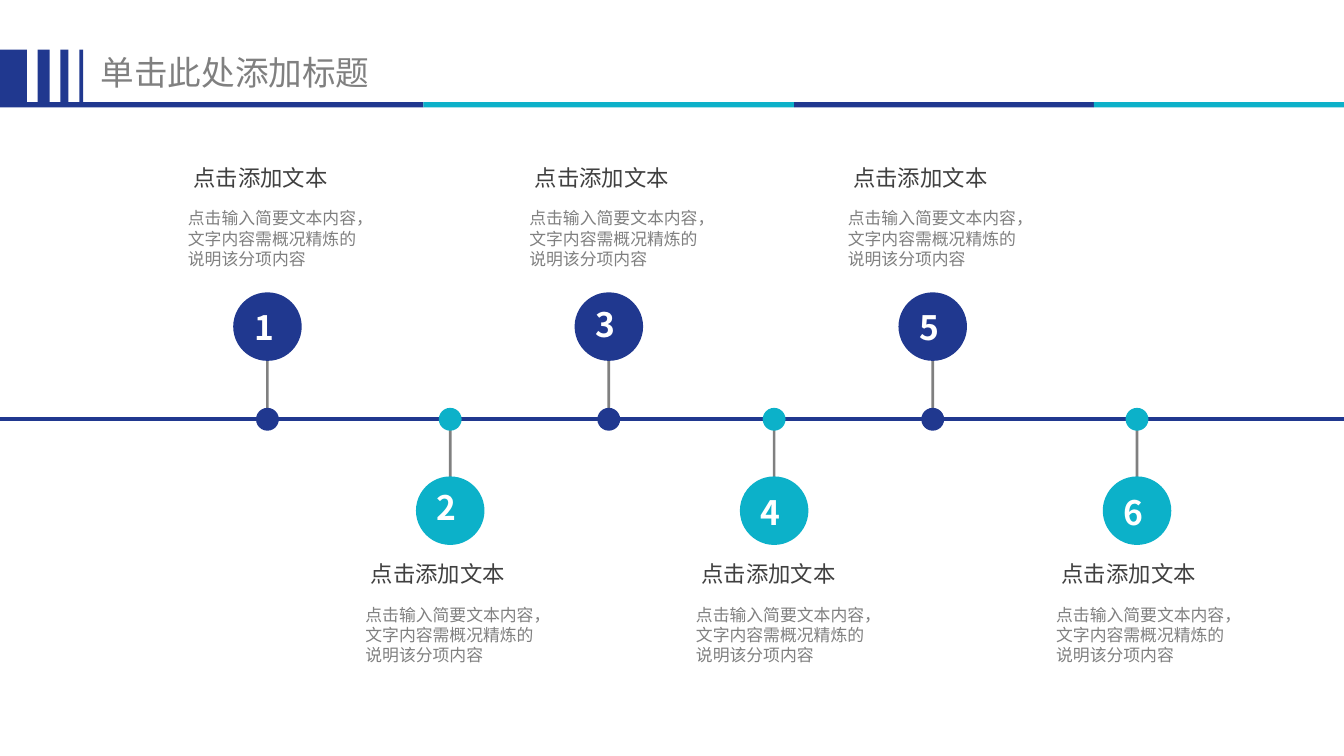
from lxml.etree import SubElement
from pptx import Presentation
from pptx.dml.color import RGBColor
from pptx.enum.shapes import MSO_SHAPE
from pptx.enum.text import MSO_AUTO_SIZE
from pptx.oxml.ns import qn
from pptx.util import Inches, Pt

COLORS = {"navy": "20388F", "teal": "0CB1C9", "gray": "808080",
          "dark": "404040", "white": "FFFFFF"}
FONT = "Noto Sans CJK SC"
FORMATS = {
    "title": {"size": Pt(18), "bold": False},
    "number": {"size": Pt(18), "bold": True},
    "heading": {"size": Pt(12), "bold": False},
    "body": {"size": Pt(9), "bold": False},
}
TIGHT = (0.07, 0.04)
NORMAL = (0.1, 0.05)

HEADING = "点击添加文本"
BODY = "点击输入简要文本内容，文字内容需概况精炼的说明该分项内容"

MILESTONES = [
    (1.99, 1.3, 2.24),
    (3.35, 2.62, 3.58),
    (4.53, 3.84, 2.22),
    (5.76, 5.08, 3.62),
    (6.94, 6.21, 2.24),
    (8.46, 7.76, 3.62),
]


def add_block(page, kind, box, color):
    shape = page.shapes.add_shape(kind, *map(Inches, box))
    shape.shadow.inherit = False
    shape.fill.solid()
    shape.fill.fore_color.rgb = RGBColor.from_string(COLORS[color])
    shape.line.fill.background()
    return shape


def add_text(page, box, text, style, color, insets=NORMAL, wrap=False):
    frame = page.shapes.add_textbox(*map(Inches, box)).text_frame
    horizontal, vertical = map(Inches, insets)
    settings = {"word_wrap": wrap, "auto_size": MSO_AUTO_SIZE.SHAPE_TO_FIT_TEXT,
                "margin_left": horizontal, "margin_right": horizontal,
                "margin_top": vertical, "margin_bottom": vertical}
    for name, value in settings.items():
        setattr(frame, name, value)
    span = frame.paragraphs[0].add_run()
    span.text = text
    for name, value in {"name": FONT, **FORMATS[style]}.items():
        setattr(span.font, name, value)
    span.font.color.rgb = RGBColor.from_string(COLORS[color])
    SubElement(span._r.get_or_add_rPr(), qn("a:ea")).set("typeface", FONT)


def add_header(page, left, top, width, height):
    add_text(page, (left + 0.68, top - 0.02, 2.67, 0.38),
             "单击此处添加标题", "title", "gray", TIGHT, True)
    rule_height = 0.04
    bar_height = height - rule_height
    for offset, bar_width in [(0, 0.2), (0.28, 0.09), (0.45, 0.06), (0.59, 0.03)]:
        add_block(page, MSO_SHAPE.RECTANGLE,
                  (left + offset, top, bar_width, bar_height), "navy")
    starts = [0, 3.15, 5.91, 8.14]
    for index, (start, end) in enumerate(zip(starts, starts[1:] + [width])):
        add_block(page, MSO_SHAPE.RECTANGLE,
                  (left + start, top + bar_height, end - start, rule_height),
                  ("navy", "teal")[index % 2])


def add_axis(page, left, top, width, height):
    axis = add_block(page, MSO_SHAPE.RECTANGLE, (left, top, width, height), "navy")
    axis.line.color.rgb = RGBColor.from_string(COLORS["navy"])
    axis.line.width = Pt(0.75)


def add_marker(page, center, axis_y, number, number_top, above):
    color = "navy" if above else "teal"
    stem_top, stem_height = (2.43, 0.69) if above else (3.2, 0.6)
    add_block(page, MSO_SHAPE.RECTANGLE,
              (center - 0.01, stem_top, 0.02, stem_height), "gray")
    distance = -0.69 if above else 0.68
    for diameter, middle in [(0.17, axis_y), (0.51, axis_y + distance)]:
        add_block(page, MSO_SHAPE.OVAL,
                  (center - diameter / 2, middle - diameter / 2, diameter, diameter), color)
    add_text(page, (center - 0.17, number_top, 0.31, 0.38),
             str(number), "number", "white", TIGHT)


def add_caption(page, left, top, width, height):
    add_text(page, (left + 0.04, top, 1.21, 0.3), HEADING, "heading", "dark")
    add_text(page, (left, top + 0.33, width, height - 0.33),
             BODY, "body", "gray", wrap=True)


def main():
    deck = Presentation()
    deck.slide_width = Inches(10)
    deck.slide_height = deck.slide_width * 9 // 16
    page = deck.slides.add_slide(deck.slide_layouts[6])
    add_header(page, 0, 0.37, 10, 0.43)
    add_axis(page, 0, 3.11, 10, 0.02)
    for number, (center, caption_left, number_top) in enumerate(MILESTONES, 1):
        above = number % 2 == 1
        add_marker(page, center, 3.12, number, number_top, above)
        add_caption(page, caption_left, 1.17 if above else 4.12, 1.45, 0.89)
    deck.save("out.pptx")


if __name__ == "__main__":
    main()
